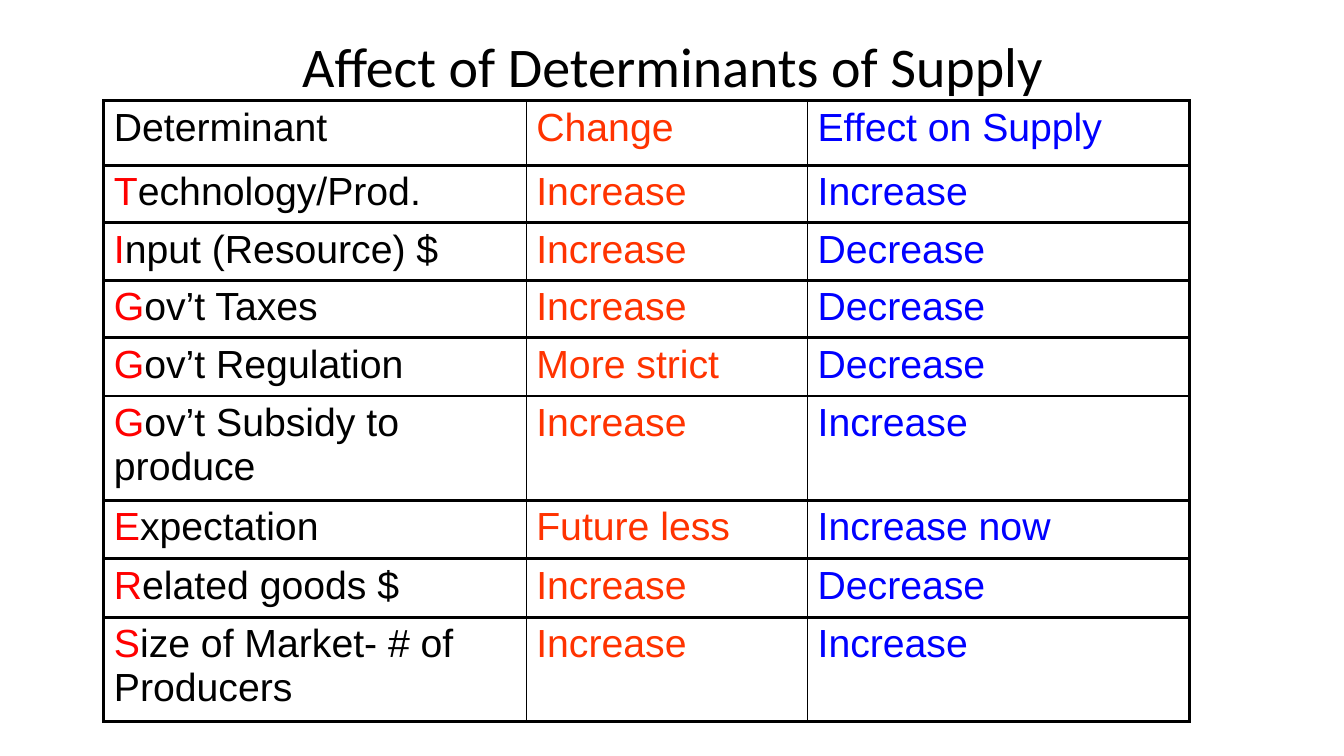
"""Build a slide with a table of the determinants of supply."""
from dataclasses import dataclass

from lxml import etree
from pptx import Presentation
from pptx.dml.color import RGBColor
from pptx.enum.text import MSO_ANCHOR, PP_ALIGN
from pptx.oxml.ns import qn
from pptx.util import Pt

CENTER = PP_ALIGN.CENTER
MIDDLE = MSO_ANCHOR.MIDDLE
EMU_PER_PX = 9144
BLANK_LAYOUT = 6


@dataclass(frozen=True)
class Theme:
    ink: str = "000000"
    initial: str = "FF0000"
    change: str = "FF3300"
    effect: str = "0000FF"
    title_font: str = "Calibri"
    table_font: str = "Arial"
    title_size: float = 40
    table_size: float = 28
    thick_line: float = 2.25
    thin_line: float = 1


THEME = Theme()
COLUMN_WIDTHS = [419, 279, 379]
ROW_HEIGHTS = [64, 57, 57, 57, 58, 103, 58, 58, 103]
HEADER = ("Determinant", "Change", "Effect on Supply")
DETERMINANTS = [
    ("Technology/Prod.", "Increase", "Increase"),
    ("Input (Resource) $", "Increase", "Decrease"),
    ("Gov’t Taxes", "Increase", "Decrease"),
    ("Gov’t Regulation", "More strict", "Decrease"),
    ("Gov’t Subsidy to produce", "Increase", "Increase"),
    ("Expectation", "Future less", "Increase now"),
    ("Related goods $", "Increase", "Decrease"),
    ("Size of Market- # of Producers", "Increase", "Increase"),
]


def px(length):
    return length * EMU_PER_PX


def add_run(paragraph, text, font, size, color):
    run = paragraph.add_run()
    run.text = text
    run.font.name = font
    run.font.size = Pt(size)
    run.font.color.rgb = RGBColor.from_string(color)


def add_title(slide, text):
    title = slide.shapes.add_textbox(px(217), px(30), px(900), px(70))
    frame = title.text_frame
    frame.word_wrap = True
    frame.vertical_anchor = MIDDLE
    paragraph = frame.paragraphs[0]
    paragraph.alignment = CENTER
    add_run(paragraph, text, THEME.title_font, THEME.title_size, THEME.ink)


def set_borders(cell, left, right):
    properties = cell._tc.get_or_add_tcPr()
    borders = {"L": left, "R": right, "T": THEME.thick_line, "B": THEME.thick_line}
    for position, (side, width) in enumerate(borders.items()):
        line = etree.Element(qn(f"a:ln{side}"), w=str(Pt(width)))
        fill = etree.SubElement(line, qn("a:solidFill"))
        etree.SubElement(fill, qn("a:srgbClr"), val=THEME.ink)
        properties.insert(position, line)


def fill_cell(cell, runs):
    cell.fill.background()
    paragraph = cell.text_frame.paragraphs[0]
    for text, color in runs:
        add_run(paragraph, text, THEME.table_font, THEME.table_size, color)


def add_supply_table(slide):
    frame = slide.shapes.add_table(
        len(ROW_HEIGHTS), len(COLUMN_WIDTHS), px(103), px(100),
        px(sum(COLUMN_WIDTHS)), px(sum(ROW_HEIGHTS)))
    table = frame.table
    table.first_row = False
    table.horz_banding = False
    for column, width in zip(table.columns, COLUMN_WIDTHS):
        column.width = px(width)
    for row, height in zip(table.rows, ROW_HEIGHTS):
        row.height = px(height)

    last = len(COLUMN_WIDTHS) - 1
    for row_index, texts in enumerate([HEADER, *DETERMINANTS]):
        name, change, effect = texts
        name_runs = [(name, THEME.ink)]
        if row_index > 0:
            name_runs = [(name[0], THEME.initial), (name[1:], THEME.ink)]
        row_runs = [name_runs, [(change, THEME.change)], [(effect, THEME.effect)]]
        for column_index, runs in enumerate(row_runs):
            cell = table.cell(row_index, column_index)
            fill_cell(cell, runs)
            set_borders(
                cell,
                THEME.thick_line if column_index == 0 else THEME.thin_line,
                THEME.thick_line if column_index == last else THEME.thin_line)


def main():
    presentation = Presentation()
    presentation.slide_width = px(1333)
    presentation.slide_height = px(750)
    slide = presentation.slides.add_slide(presentation.slide_layouts[BLANK_LAYOUT])
    add_title(slide, "Affect of Determinants of Supply")
    add_supply_table(slide)
    presentation.save("out.pptx")


if __name__ == "__main__":
    main()
